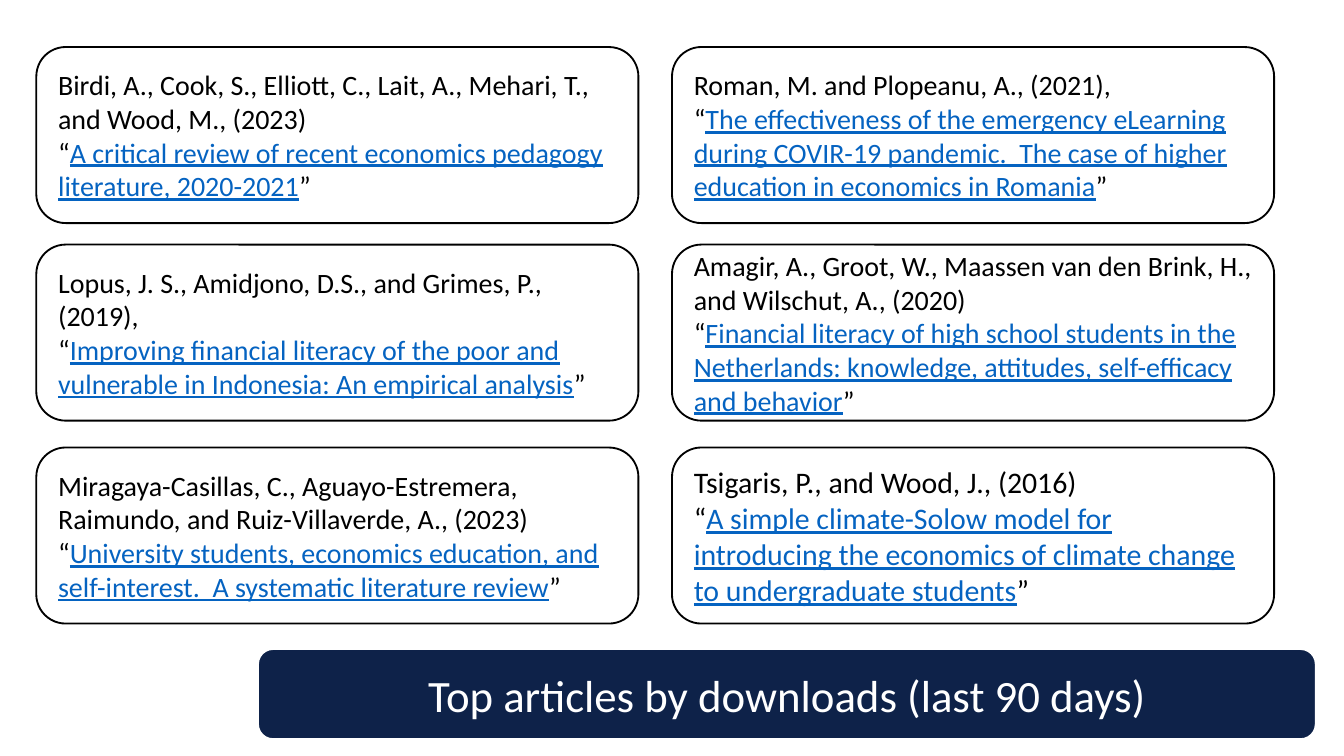
from pptx import Presentation
from pptx import util as u
from pptx.dml.color import RGBColor
from pptx.enum import shapes, text

NAVY = RGBColor(0x0E, 0x22, 0x49)
LINK = RGBColor(0x05, 0x63, 0xC1)
BLACK = RGBColor(0, 0, 0)
WHITE = RGBColor(0xFF, 0xFF, 0xFF)

SLIDE_W = u.Inches(10)
SLIDE_H = SLIDE_W * 9 // 16
COLUMNS = (0.27, 5)
ROWS = (0.35, 1.82, 3.33)
CARD_W, CARD_H = 4.48, 1.31
BANNER = (1.92, 4.83, 7.87, 0.67)

# One tuple per grid row; each article is (authors, title, text size)
ARTICLES = (
    (("Birdi, A., Cook, S., Elliott, C., Lait, A., Mehari, T., and Wood, M., (2023)",
      "A critical review of recent economics pedagogy literature, 2020-2021", 15),
     ("Roman, M. and Plopeanu, A., (2021),",
      "The effectiveness of the emergency eLearning during COVIR-19 pandemic.  "
      "The case of higher education in economics in Romania", 15)),
    (("Lopus, J. S., Amidjono, D.S., and Grimes, P., (2019),",
      "Improving financial literacy of the poor and vulnerable in Indonesia: "
      "An empirical analysis", 15),
     ("Amagir, A., Groot, W., Maassen van den Brink, H., and Wilschut, A., (2020)",
      "Financial literacy of high school students in the Netherlands: knowledge, "
      "attitudes, self-efficacy and behavior", 15)),
    (("Miragaya-Casillas, C., Aguayo-Estremera, Raimundo, and Ruiz-Villaverde, A., (2023)",
      "University students, economics education, and self-interest.  "
      "A systematic literature review", 15),
     ("Tsigaris, P., and Wood, J., (2016)",
      "A simple climate-Solow model for introducing the economics of climate change "
      "to undergraduate students", 16)),
)


def set_all(obj, **values):
    for name, value in values.items():
        setattr(obj, name, value)


def add_box(s, box, fill, line):
    """Add a rounded box and return its text frame."""
    sp = s.shapes.add_shape(shapes.MSO_SHAPE.ROUNDED_RECTANGLE, *map(u.Inches, box))
    sp.shadow.inherit = False
    sp.fill.solid()
    sp.fill.fore_color.rgb = fill
    sp.line.color.rgb = line
    sp.line.width = u.Pt(1)
    tf = sp.text_frame
    set_all(tf, word_wrap=True, vertical_anchor=text.MSO_ANCHOR.MIDDLE)
    return tf


def add_run(p, words, size, color=BLACK, underline=False):
    r = p.add_run()
    r.text = words
    set_all(r.font, name="Calibri", size=u.Pt(size), underline=underline)
    r.font.color.rgb = color


def add_card(s, left, top, authors, title, size):
    tf = add_box(s, (left, top, CARD_W, CARD_H), WHITE, BLACK)
    add_run(tf.paragraphs[0], authors, size)
    p = tf.add_paragraph()
    add_run(p, "“", size)
    add_run(p, title, size, LINK, True)
    add_run(p, "”", size)
    for p in tf.paragraphs:
        p.alignment = text.PP_ALIGN.LEFT


def add_banner(s, words):
    p = add_box(s, BANNER, NAVY, WHITE).paragraphs[0]
    p.alignment = text.PP_ALIGN.CENTER
    add_run(p, words, 24, WHITE)


def main():
    prs = Presentation()
    set_all(prs, slide_width=SLIDE_W, slide_height=SLIDE_H)
    s = prs.slides.add_slide(prs.slide_layouts.get_by_name("Blank"))
    for top, articles in zip(ROWS, ARTICLES):
        for left, article in zip(COLUMNS, articles):
            add_card(s, left, top, *article)
    add_banner(s, "Top articles by downloads (last 90 days)")
    prs.save("out.pptx")


if __name__ == "__main__":
    main()
